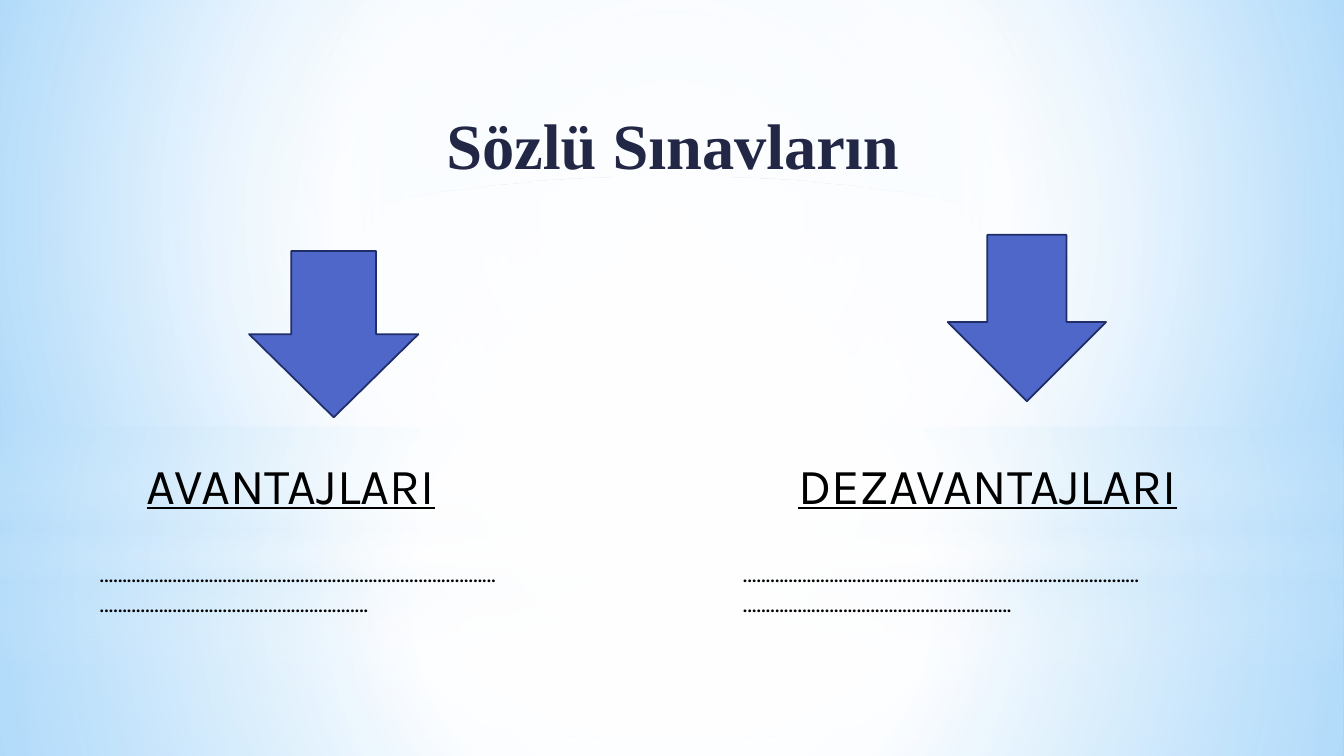
from dataclasses import dataclass

from lxml import etree
from pptx import Presentation
from pptx.dml.color import RGBColor
from pptx.enum.shapes import MSO_SHAPE
from pptx.enum.text import MSO_ANCHOR, PP_ALIGN
from pptx.oxml.ns import qn
from pptx.util import Inches, Pt

RECTANGLE, ELLIPSE, DOWN_ARROW = MSO_SHAPE.RECTANGLE, MSO_SHAPE.OVAL, MSO_SHAPE.DOWN_ARROW
TOP, BOTTOM = MSO_ANCHOR.TOP, MSO_ANCHOR.BOTTOM
LEFT, CENTER = PP_ALIGN.LEFT, PP_ALIGN.CENTER

WIDTH, HEIGHT = 13.33, 7.5
CENTRE_FOCUS = (50, 50, 50, 50)
DOTTED_LINE = "……………………………………………………………………………………………………………………………….."


@dataclass(frozen=True)
class Theme:
    title_font: str = "Times New Roman"
    body_font: str = "Karla"
    title_size: int = 46
    heading_size: int = 36
    body_size: int = 18
    title_color: str = "212745"
    text_color: str = "000000"
    arrow_fill: str = "4E67C8"
    arrow_line: str = "1F2E69"
    white: str = "FFFFFF"
    haze: str = "B4DCFA"
    sky: str = "9ED5FF"
    deep_sky: str = "5BB9FF"


def gradient(stops, focus=None, angle=90):
    """Build a gradFill from (position, colour, opacity) stops in percent; focus makes it radial."""
    fill = etree.Element(qn("a:gradFill"), rotWithShape="1")
    stop_list = etree.SubElement(fill, qn("a:gsLst"))
    for position, color, opacity in stops:
        stop = etree.SubElement(stop_list, qn("a:gs"), pos=str(position * 1000))
        tint = etree.SubElement(stop, qn("a:srgbClr"), val=color)
        if opacity < 100:
            etree.SubElement(tint, qn("a:alpha"), val=str(opacity * 1000))
    if focus:
        radial = etree.SubElement(fill, qn("a:path"), path="circle")
        sides = {side: str(inset * 1000) for side, inset in zip("ltrb", focus)}
        etree.SubElement(radial, qn("a:fillToRect"), **sides)
    else:
        etree.SubElement(fill, qn("a:lin"), ang=str(angle * 60000), scaled="0")
    return fill


def replace_solid_fill(properties, fill):
    properties.replace(properties.find(qn("a:solidFill")), fill)


class SlideBuilder:
    def __init__(self, page, theme):
        self.page = page
        self.theme = theme

    def background(self, fill):
        self.page.background.fill.solid()
        replace_solid_fill(self.page.element.find(".//" + qn("p:bgPr")), fill)

    def shape(self, kind, left, top, width, height, color):
        shape = self.page.shapes.add_shape(
            kind, Inches(left), Inches(top), Inches(width), Inches(height))
        shape.shadow.inherit = False
        shape.fill.solid()
        shape.fill.fore_color.rgb = RGBColor.from_string(color)
        return shape

    def glow(self, kind, top, height, fill):
        """Add a full-width, borderless gradient layer."""
        layer = self.shape(kind, 0, top, WIDTH, height, self.theme.white)
        layer.line.fill.background()
        replace_solid_fill(layer.element.spPr, fill)

    def arrow(self, left, top, width, height):
        arrow = self.shape(DOWN_ARROW, left, top, width, height, self.theme.arrow_fill)
        arrow.line.color.rgb = RGBColor.from_string(self.theme.arrow_line)
        arrow.line.width = Pt(1.25)

    def text(self, text, left, top, width, height, *, size, font=None, color=None,
             bold=False, underline=False, align=LEFT, anchor=TOP):
        box = self.page.shapes.add_textbox(
            Inches(left), Inches(top), Inches(width), Inches(height))
        frame = box.text_frame
        frame.word_wrap = True
        frame.vertical_anchor = anchor
        para = frame.paragraphs[0]
        para.alignment = align
        span = para.add_run()
        span.text = text
        span.font.name = font or self.theme.body_font
        span.font.size = Pt(size)
        span.font.bold = bold
        span.font.underline = underline
        span.font.color.rgb = RGBColor.from_string(color or self.theme.text_color)


def add_backdrop(builder):
    theme = builder.theme
    white, haze = theme.white, theme.haze
    builder.background(gradient(
        [(0, theme.sky, 100), (60, white, 100), (100, theme.deep_sky, 100)],
        (20, 10, 20, 60)))
    band_stops = [(0, white, 0), (29, white, 30), (45, haze, 40),
                  (55, white, 26), (65, haze, 60), (100, white, 0)]
    # Each set: horizon, top of the band, extra opacity, edge of the central glow
    for horizon, band_top, extra, glow_edge in ((5.58, 4.12, 0, 56), (4.23, 2.9, 1, 54)):
        ground = [(0, white, 91 + extra), (37, white, 76 + extra), (100, haze, 79 + extra)]
        sky = [(0, white, 89 + extra), (48, white, 62 + extra), (100, haze, 79 + extra)]
        builder.glow(RECTANGLE, horizon, HEIGHT - horizon, gradient(ground, CENTRE_FOCUS))
        builder.glow(RECTANGLE, 0, horizon, gradient(sky, CENTRE_FOCUS))
        builder.glow(RECTANGLE, band_top, 2.5, gradient(band_stops))
        builder.glow(ELLIPSE, 1.75, 5.58, gradient(
            [(0, white, 100), (glow_edge, white, 0)], CENTRE_FOCUS))


def main():
    deck = Presentation()
    deck.slide_width, deck.slide_height = Inches(WIDTH), Inches(HEIGHT)
    theme = Theme()
    builder = SlideBuilder(deck.slides.add_slide(deck.slide_layouts[6]), theme)

    add_backdrop(builder)
    builder.text("Sözlü Sınavların", 0.37, 0.68, 12.6, 1.18, size=theme.title_size,
                 font=theme.title_font, color=theme.title_color, bold=True,
                 align=CENTER, anchor=BOTTOM)

    columns = (
        ("AVANTAJLARI", 0.63, 4.51, (2.47, 2.49, 1.68), 0.89),
        ("DEZAVANTAJLARI", 7.12, 5.35, (9.4, 2.33, 1.57), 7.27),
    )
    for heading, left, width, arrow, answer_left in columns:
        builder.arrow(*arrow, 1.65)
        builder.text(heading, left, 4.46, width, 0.71, size=theme.heading_size,
                     underline=True, align=CENTER)
        builder.text(DOTTED_LINE, answer_left, 5.48, 4.25, 1.01, size=theme.body_size)

    deck.save("out.pptx")


if __name__ == "__main__":
    main()
